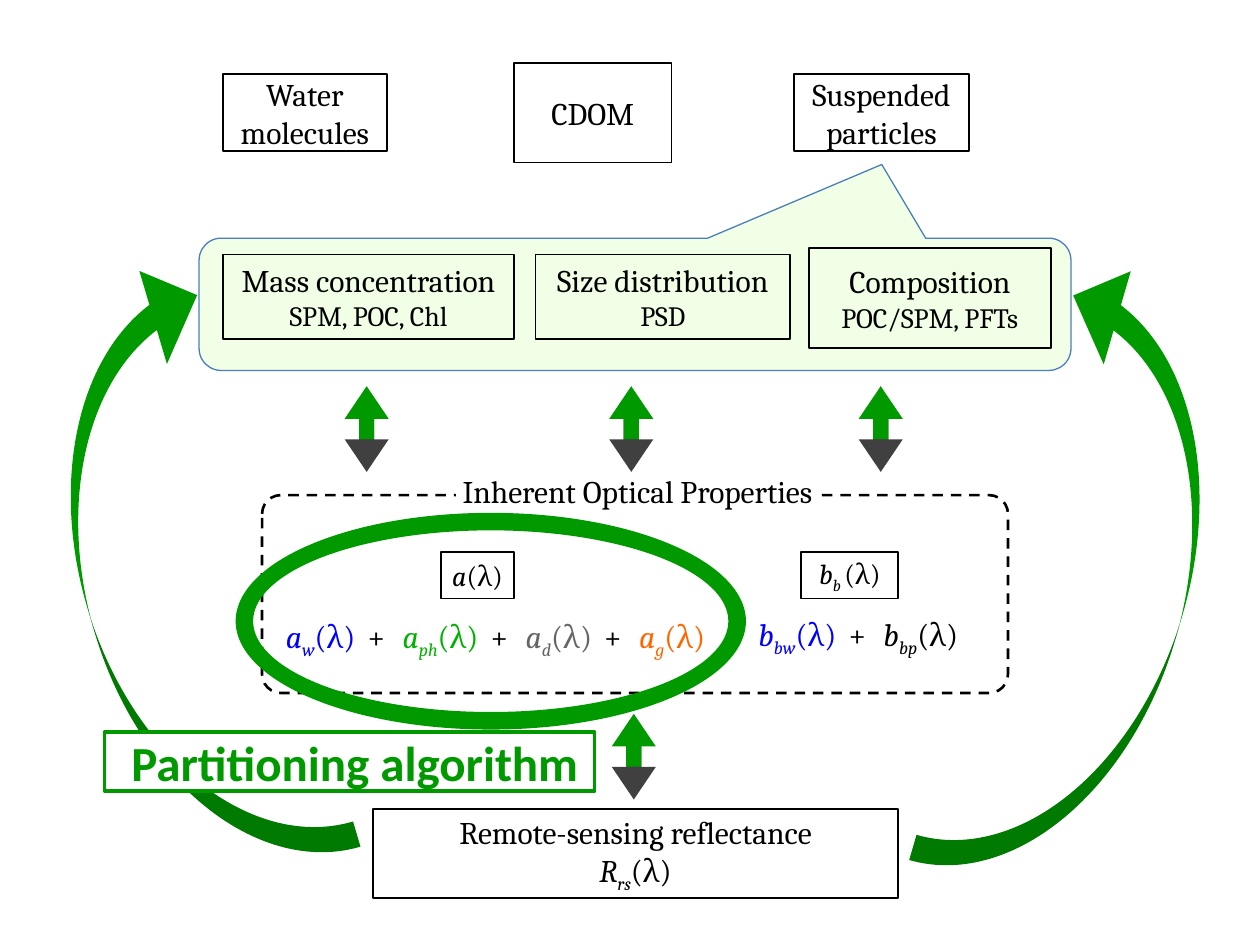
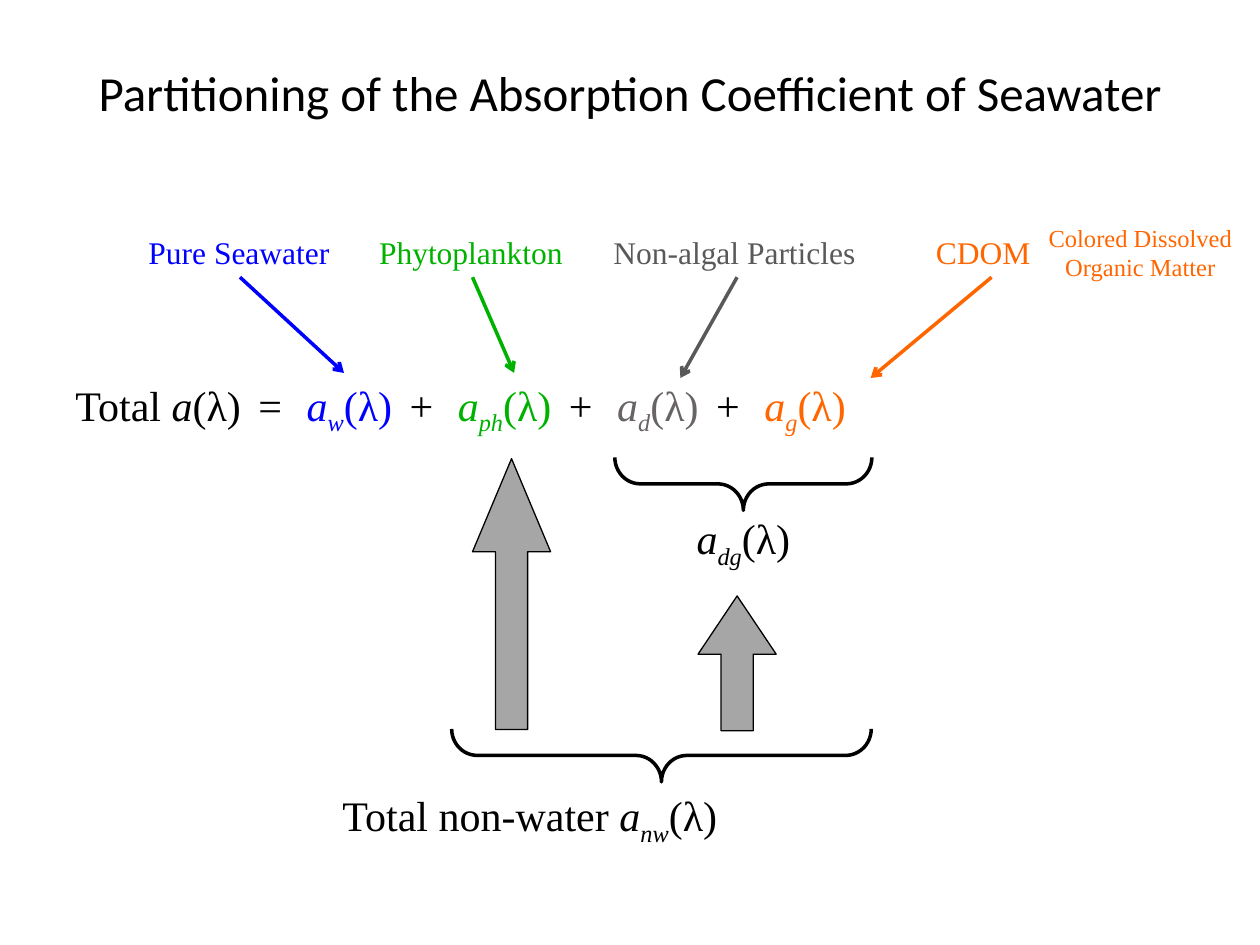
import pptx
import pptx.dml.color
import pptx.enum.dml
import pptx.enum.shapes
import pptx.enum.text
import pptx.oxml
import pptx.oxml.ns
import pptx.util

Inches = pptx.util.Inches
SHAPE = pptx.enum.shapes.MSO_SHAPE
ALIGN = pptx.enum.text.PP_ALIGN
ANCHOR = pptx.enum.text.MSO_ANCHOR

BLACK, WHITE = "000000", "FFFFFF"
WATER, PHYTO, DETRITUS, CDOM = "0000FF", "00B200", "696464", "FF6600"
LABEL_GRAY, DARK_GRAY, ARROW_GRAY, GREEN = "595959", "404040", "A6A6A6", "009900"
SERIF, TIMES, SANS = "Cambria", "Times New Roman", "Calibri"
SNUG = (0, 0, 0, 0)
FLAT = (0, 0.05, 0, 0.05)
PADDED = (0.1, 0.05, 0.1, 0.05)


def rgb(value):
    """Turn a hex string into a colour."""
    return pptx.dml.color.RGBColor.from_string(value)


def add_run(p, text, font=SERIF, size=18, color=BLACK, bold=False,
            italic=False, sub=False, spread=0):
    """Append one formatted run to a paragraph."""
    r = p.add_run()
    r.text = text
    r.font.name = font
    r.font.size = pptx.util.Pt(size)
    r.font.color.rgb = rgb(color)
    r.font.bold = bold
    r.font.italic = italic
    props = r.font._element
    if sub:
        props.set("baseline", "-25000")
    if spread:
        props.set("spc", str(round(spread * 100)))


def coefficient(symbol, sub="", color=BLACK):
    """Return the runs of a coefficient that depends on wavelength."""
    runs = [(symbol, {"italic": True, "color": color})]
    if sub:
        runs.append((sub, {"italic": True, "sub": True, "color": color}))
    return runs + [("(λ)", {"color": color})]


def operator(sign, size):
    """Return a widely spaced operator between two terms."""
    return [(f" {sign} ", {"spread": size / 6})]


def total(terms, size):
    """Return the runs of several terms joined by plus signs."""
    runs = list(terms[0])
    for term in terms[1:]:
        runs += operator("+", size) + term
    return runs


def absorption_sum(size):
    """Return the runs of the four absorption components."""
    parts = (("w", WATER), ("ph", PHYTO), ("d", DETRITUS), ("g", CDOM))
    return total([coefficient("a", sub, color) for sub, color in parts], size)


def put_text(sp, paragraphs, align=ALIGN.CENTER, anchor=ANCHOR.MIDDLE,
             margins=FLAT, wrap=True, **style):
    """Write paragraphs, each a list of (text, format) runs, into a shape."""
    tf = sp.text_frame
    tf.word_wrap = wrap
    tf.vertical_anchor = anchor
    tf.margin_left, tf.margin_top, tf.margin_right, tf.margin_bottom = map(
        Inches, margins)
    for i, runs in enumerate(paragraphs):
        p = tf.add_paragraph() if i else tf.paragraphs[0]
        p.alignment = align
        for text, own in runs:
            add_run(p, text, **{**style, **own})


def add_shape(slide, kind, at, fill=None, line=None, width=1, adj=(), rot=0):
    """Add a preset shape without a shadow."""
    sp = slide.shapes.add_shape(kind, *map(Inches, at))
    sp.shadow.inherit = False
    sp.rotation = rot
    for i, value in enumerate(adj):
        sp.adjustments[i] = value
    if fill:
        sp.fill.solid()
        sp.fill.fore_color.rgb = rgb(fill)
    else:
        sp.fill.background()
    if line:
        sp.line.color.rgb = rgb(line)
        sp.line.width = pptx.util.Pt(width)
    else:
        sp.line.fill.background()
    return sp


def add_box(slide, at, paragraphs, fill=None, line=BLACK, width=1, **text):
    """Add a rectangle with centred text."""
    sp = add_shape(slide, SHAPE.RECTANGLE, at, fill, line, width)
    put_text(sp, paragraphs, **text)


def add_text(slide, at, runs, align=ALIGN.LEFT, anchor=ANCHOR.TOP,
             margins=PADDED, **text):
    """Add a text box of one paragraph."""
    sp = slide.shapes.add_textbox(*map(Inches, at))
    put_text(sp, [runs], align, anchor, margins, **text)
    return sp


def add_pointer(slide, label, end, color):
    """Draw an arrow from the bottom of a label to a term."""
    start = label.left + label.width // 2, label.top + label.height
    line = slide.shapes.add_connector(
        pptx.enum.shapes.MSO_CONNECTOR.STRAIGHT, *start, *map(Inches, end))
    line.begin_connect(label, 2)
    line.line.color.rgb = rgb(color)
    line.line.width = pptx.util.Pt(2)
    ns = pptx.oxml.ns.nsdecls("a")
    line.line._get_or_add_ln().append(
        pptx.oxml.parse_xml(f'<a:tailEnd {ns} type="arrow"/>'))
    line._element.spPr.append(pptx.oxml.parse_xml(f"<a:effectLst {ns}/>"))


def add_exchange(slide, left, top):
    """Add a green up arrow over a gray down arrow."""
    for offset, rot, color in ((0.26, 90, DARK_GRAY), (0, 270, GREEN)):
        add_shape(slide, SHAPE.RIGHT_ARROW, (left, top + offset, 0.42, 0.35),
                  color, adj=(0.341, 0.74), rot=rot)


def add_sweep(slide, at, rot, flip=False):
    """Add a long curved arrow, mirrored if asked."""
    sp = add_shape(slide, SHAPE.CURVED_RIGHT_ARROW, at, GREEN,
                   adj=(0.135, 0.5, 0.25), rot=rot)
    if flip:
        sp._element.spPr.xfrm.set("flipH", "1")


def add_callout(slide):
    """Add the half transparent callout under the suspended particles."""
    sp = add_shape(slide, SHAPE.ROUNDED_RECTANGULAR_CALLOUT,
                   (1.58, 1.89, 6.92, 1.05), "E3FFCD", "4B7EBC", 0.75,
                   (0.283, -1.057, 0.167))
    color = sp._element.spPr.find(
        f"{pptx.oxml.ns.qn('a:solidFill')}/{pptx.oxml.ns.qn('a:srgbClr')}")
    ns = pptx.oxml.ns.nsdecls("a")
    color.append(pptx.oxml.parse_xml(f'<a:alpha {ns} val="50000"/>'))


def build_optics(slide):
    """Build the diagram from seawater constituents to reflectance."""
    frame = add_shape(slide, SHAPE.ROUNDED_RECTANGLE, (2.08, 3.93, 5.92, 1.57),
                      line=BLACK, width=1.5, adj=(0.095,))
    frame.line.dash_style = pptx.enum.dml.MSO_LINE.DASH
    add_box(slide, (3.62, 3.75, 2.88, 0.3),
            [[("Inherent Optical Properties", {})]], WHITE, None, margins=SNUG)
    add_callout(slide)

    add_box(slide, (3.5, 4.38, 0.58, 0.37), [coefficient("a")], size=16)
    add_box(slide, (6.36, 4.38, 0.77, 0.37), [coefficient("b", "b ")], size=16)
    add_box(slide, (2.96, 6.42, 4.17, 0.71),
            [[("Remote-sensing reflectance", {})], coefficient("R", "rs")])

    for at, name, detail in (
            ((1.77, 2.02, 2.31, 0.67), "Mass concentration", "SPM, POC, Chl"),
            ((4.25, 2.02, 2.02, 0.67), "Size distribution", "PSD"),
            ((6.42, 1.97, 1.92, 0.79), "Composition", "POC/SPM, PFTs")):
        add_box(slide, at, [[(name, {})], [(detail, {"size": 16})]])
    for at, name in (((1.77, 0.59, 1.3, 0.61), "Water molecules"),
                     ((4.08, 0.5, 1.25, 0.79), "CDOM"),
                     ((6.3, 0.59, 1.39, 0.61), "Suspended particles")):
        add_box(slide, at, [[(name, {})]], WHITE, margins=SNUG)

    add_text(slide, (2.17, 4.85, 3.67, 0.4), absorption_sum(18), wrap=False)
    backscatter = [coefficient("b", "bw", WATER), coefficient("b", "bp")]
    add_text(slide, (5.92, 4.83, 1.92, 0.4), total(backscatter, 18), wrap=False)

    for left, top in ((2.7, 3.1), (4.8, 3.1), (6.78, 3.1), (4.82, 5.7)):
        add_exchange(slide, left, top)
    add_sweep(slide, (7.89, 2.09, 1.54, 5.05), 196.2)
    add_sweep(slide, (0.65, 2.09, 1.54, 4.95), 163.5, flip=True)
    add_shape(slide, SHAPE.DONUT, (1.87, 4.07, 4.05, 1.72), GREEN, adj=(0.081,))
    add_box(slide, (0.83, 5.81, 3.89, 0.47), [[("Partitioning algorithm", {})]],
            WHITE, GREEN, 2, margins=(0.08, 0, 0, 0),
            font=SANS, size=28, color=GREEN, bold=True)


def build_partition(slide):
    """Build the equation that splits the absorption coefficient."""
    add_text(slide, (0.39, 0.34, 9.22, 0.78),
             [("Partitioning of the Absorption Coefficient of Seawater", {})],
             ALIGN.CENTER, ANCHOR.MIDDLE, font=SANS, size=28)

    formula = {"font": TIMES, "size": 24, "wrap": False}
    equation = ([("Total ", {})] + coefficient("a") + operator("=", 24)
                + absorption_sum(24))
    add_text(slide, (0.5, 2.96, 6.75, 0.5), equation, **formula)
    add_text(slide, (2.62, 6.22, 3.24, 0.5),
             [("Total non-water ", {})] + coefficient("a", "nw"), **formula)
    add_text(slide, (5.43, 4.02, 1.02, 0.51), coefficient("a", "dg"), **formula)

    for at in ((5.04, 4.33, 0.42, 3.33), (5.69, 2.82, 0.42, 2.04)):
        add_shape(slide, SHAPE.LEFT_BRACE, at, line=BLACK, width=2,
                  adj=(0.483, 0.5), rot=270)

    for name, left, width, end, color in (
            ("Pure Seawater", 1.08, 1.65, (2.73, 2.96), WATER),
            ("Phytoplankton", 2.91, 1.68, (4.08, 2.96), PHYTO),
            ("Non-algal Particles", 4.77, 2.16, (5.4, 3), LABEL_GRAY),
            ("CDOM", 7.33, 1.08, (6.91, 3), CDOM)):
        label = add_text(slide, (left, 1.8, width, 0.4), [(name, {})],
                         font=TIMES, color=color, wrap=False)
        add_pointer(slide, label, end, color)

    for at, head in (((3.75, 3.64, 0.62, 2.15), 1.192),
                     ((5.54, 4.73, 0.62, 1.07), 0.746)):
        add_shape(slide, SHAPE.UP_ARROW, at, ARROW_GRAY, BLACK, 0.75,
                  (0.411, head))
    add_text(slide, (8.29, 1.72, 1.52, 0.57),
             [("Colored Dissolved Organic Matter", {})], ALIGN.CENTER,
             margins=FLAT, font=TIMES, size=14, color=CDOM)


def main():
    """Build both slides and save the file."""
    prs = pptx.Presentation()
    prs.slide_width, prs.slide_height = Inches(10), Inches(7.5)
    for build in (build_optics, build_partition):
        build(prs.slides.add_slide(prs.slide_layouts[6]))
    prs.save("out.pptx")


if __name__ == "__main__":
    main()
